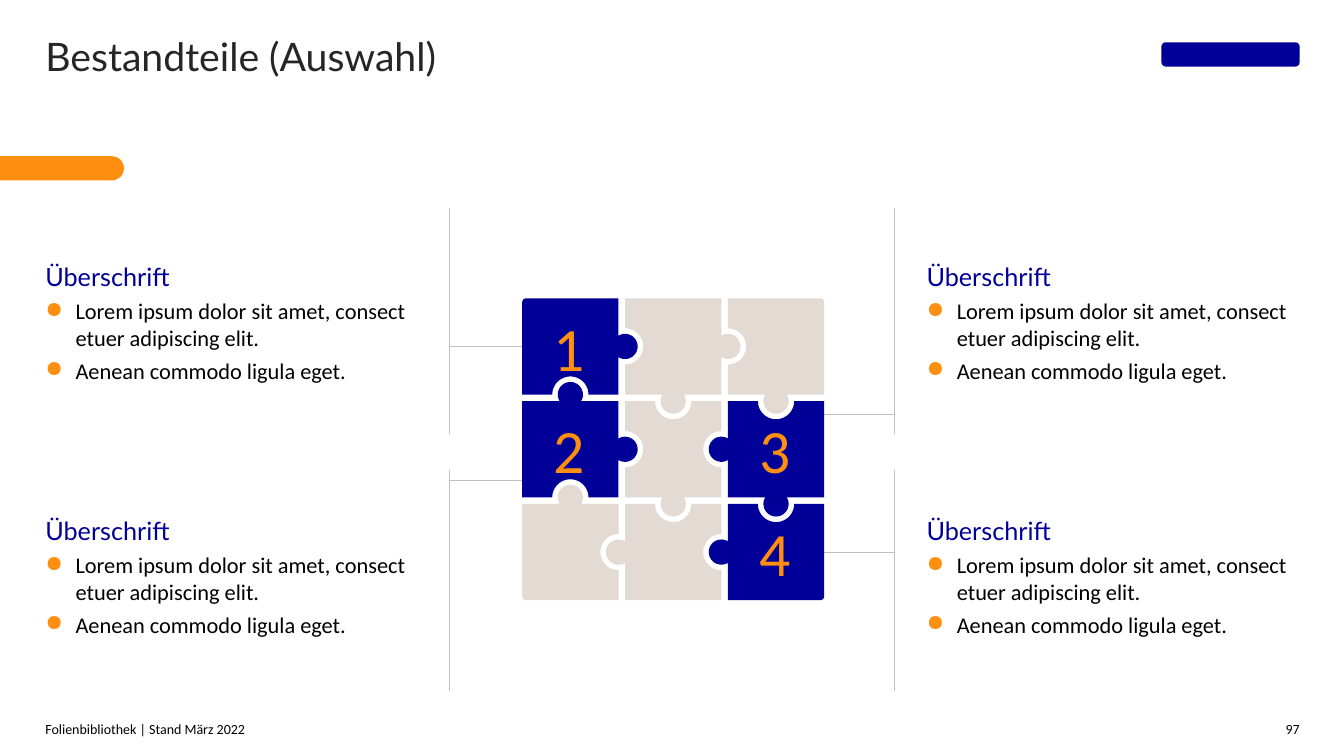
from math import asin, cos, pi, sin

from lxml import etree
from pptx import Presentation
from pptx.dml.color import RGBColor
from pptx.enum.shapes import MSO_CONNECTOR, MSO_SHAPE
from pptx.enum.text import MSO_ANCHOR, PP_ALIGN
from pptx.oxml.ns import qn
from pptx.util import Inches, Pt

STRAIGHT = MSO_CONNECTOR.STRAIGHT
ROUNDED, ROUND_END = MSO_SHAPE.ROUNDED_RECTANGLE, MSO_SHAPE.ROUND_2_SAME_RECTANGLE
TOP, MIDDLE, BOTTOM = MSO_ANCHOR.TOP, MSO_ANCHOR.MIDDLE, MSO_ANCHOR.BOTTOM
LEFT, CENTER, RIGHT = PP_ALIGN.LEFT, PP_ALIGN.CENTER, PP_ALIGN.RIGHT

NAVY, ORANGE, SAND = "000099", "FE8F11", "E4DAD4"
GREY, INK, BLACK = "BFBFBF", "262626", "000000"
HEADING_FONT, BODY_FONT = "Lato", "Calibri"

WIDTH, HEIGHT = 13.33, 7.5
MARGIN = 0.45
CONTENT_TOP, CONTENT_BOTTOM = 2.06, 6.86
COLUMN_WIDTH, BLOCK_HEIGHT = 3.7, 2.28
RIGHT_COLUMN = WIDTH - MARGIN - COLUMN_WIDTH + 0.01

# Puzzle: a 3 x 3 grid of pieces
PUZZLE_LEFT, PUZZLE_TOP = 5.18, 2.96
PIECE, GAP = 0.955, 0.065
PITCH = PIECE + GAP
TAB_RADIUS, SOCKET_RADIUS, CORNER_RADIUS = 0.125, 0.18, 0.04
# 1: the tab points right or down, -1: it points left or up
SIDE_JOINTS = [[1, 1], [1, -1], [-1, -1]]
LOWER_JOINTS = [[-1, 1, 1], [-1, 1, 1]]
NUMBERED = {(0, 0): "1", (1, 0): "2", (1, 2): "3", (2, 2): "4"}

HEADING = "Überschrift"
POINTS = ["Lorem ipsum dolor sit amet, consect etuer adipiscing elit.",
          "Aenean commodo ligula eget."]


def color(value):
    return RGBColor.from_string(value)


def paint(shape, fill):
    shape.shadow.inherit = False
    shape.fill.solid()
    shape.fill.fore_color.rgb = color(fill)
    shape.line.fill.background()


def style(paragraph, size, font, ink, align=LEFT):
    paragraph.alignment = align
    for run in paragraph.runs:
        run.font.size, run.font.name = Pt(size), font
        run.font.color.rgb = color(ink)


def add_frame(slide, box, anchor):
    frame = slide.shapes.add_textbox(*map(Inches, box)).text_frame
    frame.word_wrap = True
    frame.vertical_anchor = anchor
    frame.margin_left = frame.margin_right = frame.margin_top = frame.margin_bottom = 0
    return frame


def add_label(slide, box, text, size, font, ink, anchor=TOP, align=LEFT):
    frame = add_frame(slide, box, anchor)
    frame.text = text
    style(frame.paragraphs[0], size, font, ink, align)


def add_rule(slide, x1, y1, x2, y2):
    rule = slide.shapes.add_connector(STRAIGHT, *map(Inches, (x1, y1, x2, y2)))
    rule.line.color.rgb = color(GREY)
    rule.line.width = Pt(0.75)
    etree.SubElement(rule._element.spPr, qn("a:effectLst"))


def add_bullet(paragraph):
    properties = paragraph._p.get_or_add_pPr()
    properties.set("marL", str(Inches(0.3)))
    properties.set("indent", str(-Inches(0.3)))
    bullet_color = etree.SubElement(properties, qn("a:buClr"))
    etree.SubElement(bullet_color, qn("a:srgbClr")).set("val", ORANGE)
    etree.SubElement(properties, qn("a:buChar")).set("char", "●")


def add_text_block(slide, left, top):
    frame = add_frame(slide, (left, top, COLUMN_WIDTH, BLOCK_HEIGHT), MIDDLE)
    frame.text = "\n".join([HEADING] + POINTS)
    heading, *points = frame.paragraphs
    style(heading, 18, HEADING_FONT, NAVY)
    heading.space_after = Pt(4)
    for point in points:
        style(point, 16, BODY_FONT, BLACK)
        point.level = 1
        point.space_after = Pt(4)
        add_bullet(point)


def arc(x, y, radius, start, end, steps=24):
    angles = (start + (end - start) * step / steps for step in range(steps + 1))
    return [(x + radius * cos(angle), y + radius * sin(angle)) for angle in angles]


def side_points(joint, rounded):
    """One side as (distance along it, distance outwards), with its end corner."""
    points = []
    if joint > 0:
        dip = asin(GAP / TAB_RADIUS)
        points += arc(PIECE / 2, GAP, TAB_RADIUS, pi + dip, -dip)
    elif joint < 0:
        points += arc(PIECE / 2, 0, SOCKET_RADIUS, pi, 2 * pi)
    if rounded:
        return points + arc(PIECE - CORNER_RADIUS, -CORNER_RADIUS, CORNER_RADIUS, pi / 2, 0, 6)
    return points + [(PIECE, 0)]


def piece_joints(row, column):
    """Top, right, bottom, left: 1 tab, -1 socket, 0 border."""
    return [-LOWER_JOINTS[row - 1][column] if row > 0 else 0,
            SIDE_JOINTS[row][column] if column < 2 else 0,
            LOWER_JOINTS[row][column] if row < 2 else 0,
            -SIDE_JOINTS[row][column - 1] if column > 0 else 0]


def add_piece(slide, left, top, joints, fill):
    corners = [(0, 0), (PIECE, 0), (PIECE, PIECE), (0, PIECE)]
    directions = [(1, 0), (0, 1), (-1, 0), (0, -1)]
    outline = []
    for side, ((x, y), (dx, dy)) in enumerate(zip(corners, directions)):
        rounded = joints[side] == joints[(side + 1) % 4] == 0
        for along, out in side_points(joints[side], rounded):
            outline.append((Inches(left + x + along * dx + out * dy),
                            Inches(top + y + along * dy - out * dx)))
    builder = slide.shapes.build_freeform(*outline[-1])
    builder.add_line_segments(outline[:-1], close=True)
    paint(builder.convert_to_shape(), fill)


def add_puzzle(slide, left, top):
    for row in range(3):
        for column in range(3):
            fill = NAVY if (row, column) in NUMBERED else SAND
            add_piece(slide, left + column * PITCH, top + row * PITCH,
                      piece_joints(row, column), fill)
    for (row, column), number in NUMBERED.items():
        add_label(slide, (left + column * PITCH - 0.01, top + row * PITCH, PIECE, PIECE),
                  number, 44, BODY_FONT, ORANGE, MIDDLE, CENTER)


def add_callouts(slide, spine, puzzle_edge, leader_heights):
    spans = [(CONTENT_TOP, 4.31), (4.66, CONTENT_BOTTOM)]
    for (start, end), height in zip(spans, leader_heights):
        add_rule(slide, spine, start, spine, end)
        add_rule(slide, spine, height, puzzle_edge, height)


def add_header(slide):
    add_label(slide, (MARGIN, 0.32, 9.61, 0.55), "Bestandteile (Auswahl)", 28, HEADING_FONT, INK)
    # Plain mark in the brand corner
    mark = slide.shapes.add_shape(ROUNDED, *map(Inches, (11.52, 0.42, 1.37, 0.24)))
    paint(mark, NAVY)
    # Accent bar, an upright shape turned so that its round end faces right
    length, thickness, middle = 1.23, 0.24, 1.67
    bar = slide.shapes.add_shape(ROUND_END, Inches((length - thickness) / 2),
                                 Inches(middle - length / 2), Inches(thickness), Inches(length))
    bar.rotation = 90
    bar.adjustments[0] = 0.5
    paint(bar, ORANGE)


def add_footer(slide):
    top, height = 7.16, 0.16
    add_label(slide, (MARGIN, top, 11.06, height), "Folienbibliothek | Stand März 2022",
              10, BODY_FONT, BLACK, BOTTOM)
    add_label(slide, (12.58, top, 0.31, height), "97", 10, BODY_FONT, BLACK, BOTTOM, RIGHT)


def main():
    deck = Presentation()
    deck.slide_width, deck.slide_height = Inches(WIDTH), Inches(HEIGHT)
    slide = deck.slides.add_slide(deck.slide_layouts[6])
    add_header(slide)
    add_callouts(slide, 4.46, PUZZLE_LEFT, (3.44, 4.77))
    add_callouts(slide, 8.87, PUZZLE_LEFT + 2 * PITCH + PIECE, (4.11, 5.48))
    add_puzzle(slide, PUZZLE_LEFT, PUZZLE_TOP)
    for left in (MARGIN, RIGHT_COLUMN):
        for top in (CONTENT_TOP, CONTENT_BOTTOM - BLOCK_HEIGHT):
            add_text_block(slide, left, top)
    add_footer(slide)
    deck.save("out.pptx")


if __name__ == "__main__":
    main()
